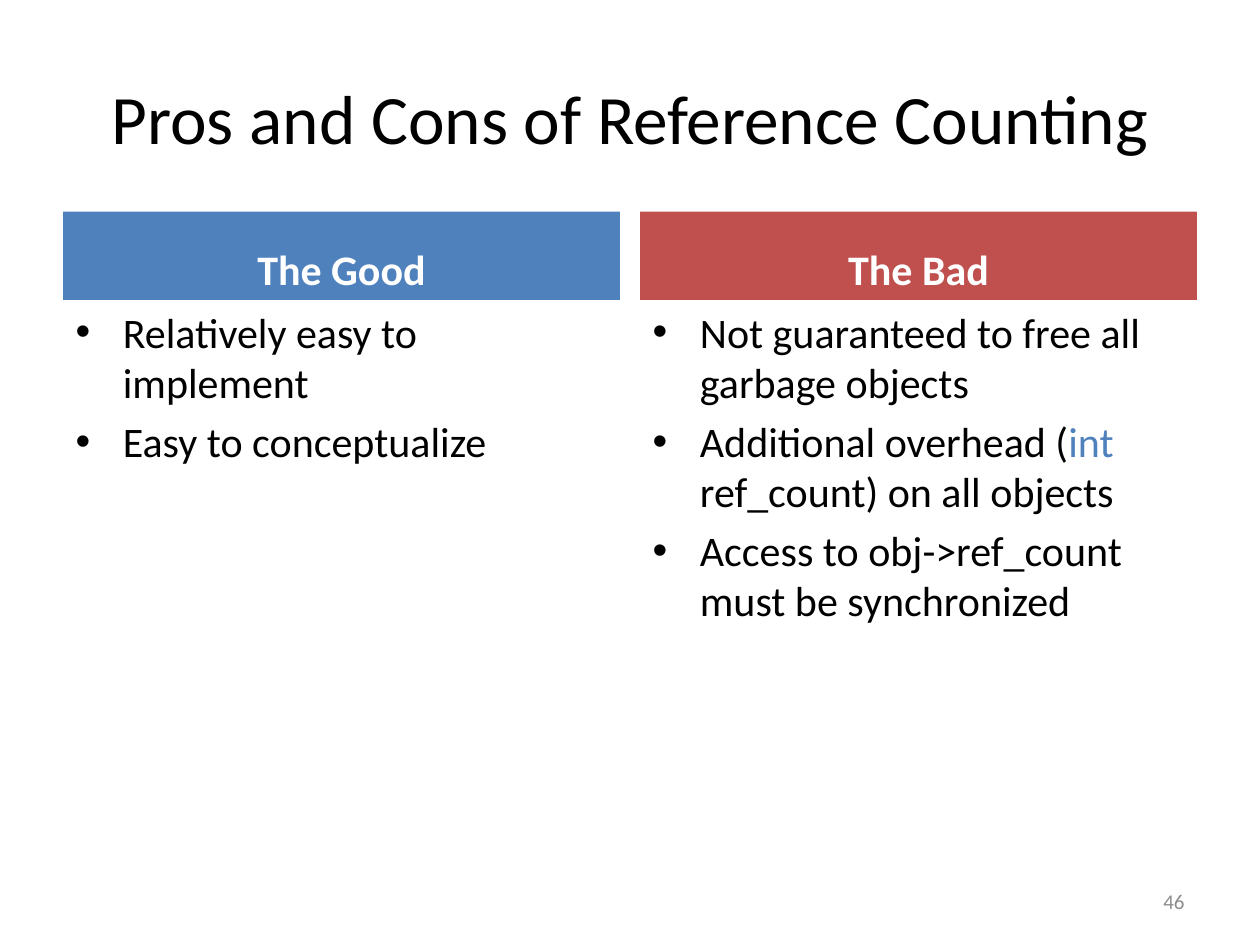
from dataclasses import dataclass

from pptx import Presentation
from pptx.dml.color import RGBColor
from pptx.enum.text import MSO_ANCHOR, MSO_AUTO_SIZE, PP_ALIGN
from pptx.util import Inches, Pt


@dataclass(frozen=True)
class Theme:
    font: str = "Calibri"
    ink: str = "000000"
    header_ink: str = "FFFFFF"
    good: str = "4F81BD"
    bad: str = "C0504D"
    keyword: str = "4F81BD"
    muted: str = "8C8C8C"
    title_size: float = 39.6
    text_size: float = 24
    number_size: float = 12


THEME = Theme()
COMPARISON_LAYOUT = 4
MARGIN, COLUMN_WIDTH, COLUMN_GAP = 0.5, 4.42, 0.16
COLUMN_TOP, COLUMN_HEIGHT, HEADER_HEIGHT = 1.68, 5.02, 0.7

# Each point is a list of (text, colour) pieces.
COLUMNS = [
    ("The Good", THEME.good, [
        [("Relatively easy to implement", THEME.ink)],
        [("Easy to conceptualize", THEME.ink)],
    ]),
    ("The Bad", THEME.bad, [
        [("Not guaranteed to free all garbage objects", THEME.ink)],
        [("Additional overhead (", THEME.ink), ("int ", THEME.keyword),
         ("ref_count) on all objects", THEME.ink)],
        [("Access to obj->ref_count must be synchronized", THEME.ink)],
    ]),
]


def place(shape, left, top, width, height):
    shape.left, shape.top = Inches(left), Inches(top)
    shape.width, shape.height = Inches(width), Inches(height)


def style_run(run, size, color, bold=False):
    run.font.name = THEME.font
    run.font.size = Pt(size)
    run.font.bold = bold
    run.font.color.rgb = RGBColor.from_string(color)


def set_line(shape, text, size, color, align, anchor, bold=False):
    """Fill a shape with one formatted line of text."""
    frame = shape.text_frame
    frame.text = text
    frame.word_wrap = True
    frame.auto_size = MSO_AUTO_SIZE.NONE
    frame.vertical_anchor = anchor
    paragraph = frame.paragraphs[0]
    paragraph.alignment = align
    style_run(paragraph.runs[0], size, color, bold)


def add_title(title, text, box):
    place(title, *box)
    set_line(title, text, THEME.title_size, THEME.ink,
             PP_ALIGN.CENTER, MSO_ANCHOR.MIDDLE)


def fill_points(body, points):
    frame = body.text_frame
    frame.auto_size = MSO_AUTO_SIZE.NONE
    for i, pieces in enumerate(points):
        paragraph = frame.add_paragraph() if i else frame.paragraphs[0]
        for text, color in pieces:
            run = paragraph.add_run()
            run.text = text
            style_run(run, THEME.text_size, color)


def add_column(header, body, column, box):
    """Place a coloured header with its bullet list below it."""
    heading, color, points = column
    left, top, width, height = box
    place(header, left, top, width, HEADER_HEIGHT)
    header.fill.solid()
    header.fill.fore_color.rgb = RGBColor.from_string(color)
    set_line(header, heading, THEME.text_size, THEME.header_ink,
             PP_ALIGN.CENTER, MSO_ANCHOR.BOTTOM, bold=True)
    place(body, left, top + HEADER_HEIGHT, width, height - HEADER_HEIGHT)
    fill_points(body, points)


def add_slide_number(slide, text, box):
    number = slide.shapes.add_textbox(*map(Inches, box))
    set_line(number, text, THEME.number_size, THEME.muted,
             PP_ALIGN.RIGHT, MSO_ANCHOR.MIDDLE)


def main():
    deck = Presentation()
    deck.slide_width, deck.slide_height = Inches(10), Inches(7.5)
    slide = deck.slides.add_slide(deck.slide_layouts[COMPARISON_LAYOUT])
    title, *parts = slide.placeholders

    add_title(title, "Pros and Cons of Reference Counting",
              (MARGIN, 0.3, 9, 1.25))
    for i, column in enumerate(COLUMNS):
        header, body = parts[2 * i:2 * i + 2]
        left = MARGIN + i * (COLUMN_WIDTH + COLUMN_GAP)
        add_column(header, body, column,
                   (left, COLUMN_TOP, COLUMN_WIDTH, COLUMN_HEIGHT))
    add_slide_number(slide, "46", (7.17, 6.95, 2.33, 0.4))

    deck.save("out.pptx")


if __name__ == "__main__":
    main()
